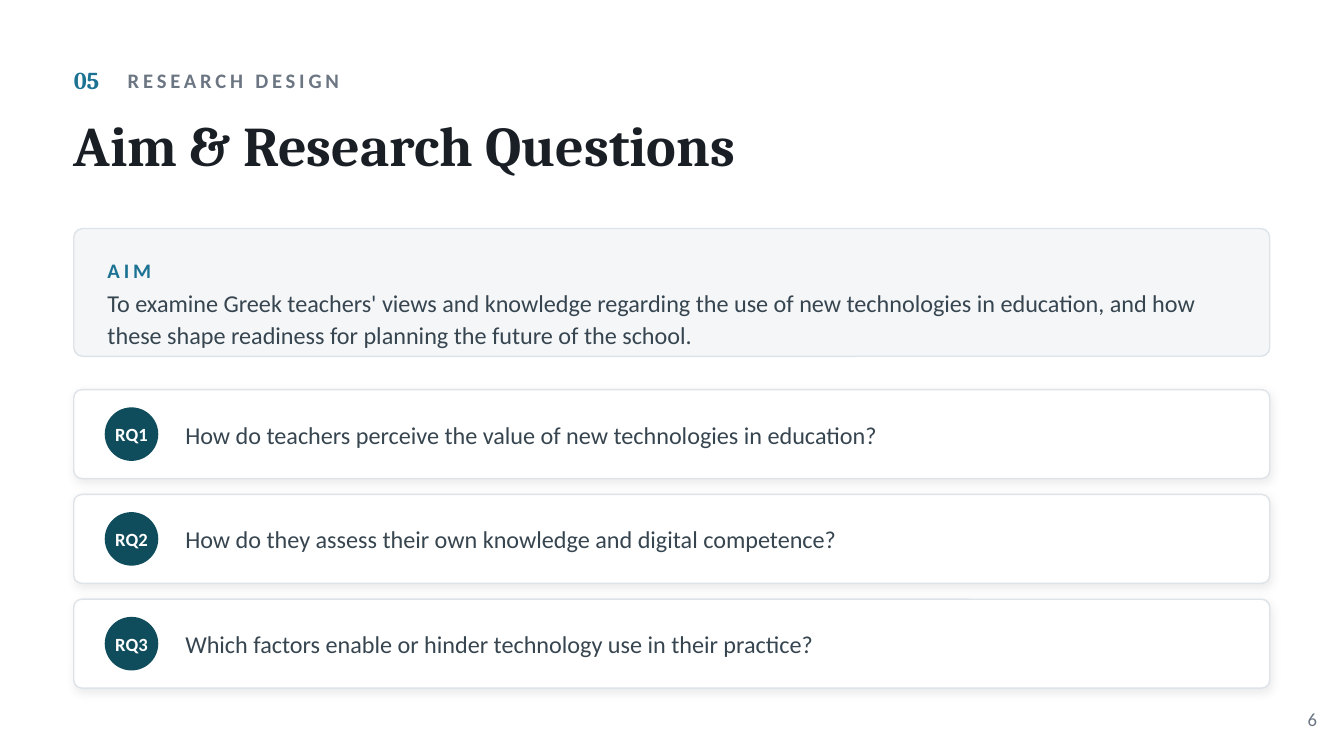
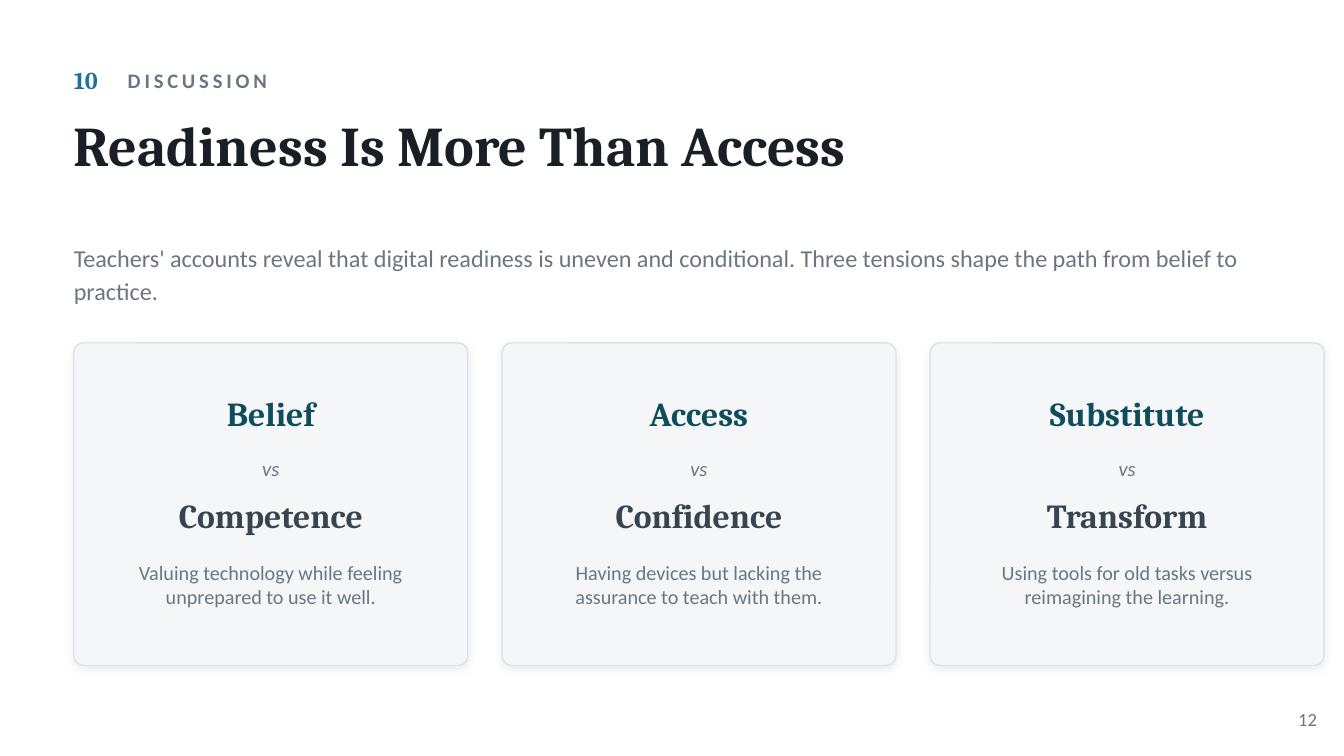
from dataclasses import dataclass, replace

from lxml import etree
from pptx import Presentation
from pptx.dml.color import RGBColor
from pptx.enum.shapes import MSO_SHAPE
from pptx.enum.text import MSO_ANCHOR, MSO_AUTO_SIZE, PP_ALIGN
from pptx.oxml.ns import qn
from pptx.shapes.autoshape import Shape
from pptx.slide import Slide
from pptx.util import Cm, Pt

WHITE = RGBColor(0xFF, 0xFF, 0xFF)
PANEL = RGBColor(0xF4, 0xF6, 0xF8)
BORDER = RGBColor(0xDD, 0xE3, 0xE8)
INK = RGBColor(0x1A, 0x1F, 0x26)
SLATE = RGBColor(0x36, 0x45, 0x4F)
GRAY = RGBColor(0x6B, 0x76, 0x82)
BLUE = RGBColor(0x1C, 0x72, 0x93)
TEAL = RGBColor(0x0F, 0x4C, 0x5C)

SERIF = "Cambria"
SANS = "Calibri"

LEFT = 1.86
WIDTH = 30.14


@dataclass(frozen=True)
class Box:
    x: float
    y: float
    w: float
    h: float

    def lengths(self) -> tuple[Cm, Cm, Cm, Cm]:
        return Cm(self.x), Cm(self.y), Cm(self.w), Cm(self.h)


@dataclass(frozen=True)
class Style:
    size: float
    color: RGBColor
    name: str = SANS
    bold: bool = False
    italic: bool = False
    align: PP_ALIGN = PP_ALIGN.LEFT
    anchor: MSO_ANCHOR = MSO_ANCHOR.MIDDLE
    line_pt: float | None = None
    tracking: float = 0


@dataclass(frozen=True)
class Question:
    label: str
    text: str


@dataclass(frozen=True)
class Tension:
    first: str
    second: str
    detail: str


TITLE = Style(40, INK, SERIF, bold=True, anchor=MSO_ANCHOR.TOP, line_pt=45.3)
NUMBER = Style(17.3, BLUE, SERIF, bold=True)
SECTION = Style(14.7, GRAY, bold=True, tracking=2.7)
PAGE = Style(13.3, GRAY, align=PP_ALIGN.RIGHT)
AIM_LABEL = replace(SECTION, color=BLUE)
AIM_TEXT = Style(17.3, SLATE, line_pt=22.7)
QUESTION = replace(AIM_TEXT, line_pt=21.3)
BADGE = Style(13.3, WHITE, bold=True, align=PP_ALIGN.CENTER)
LEAD = Style(17.3, GRAY, line_pt=24)
FIRST = Style(24, TEAL, SERIF, bold=True, align=PP_ALIGN.CENTER)
SECOND = replace(FIRST, color=SLATE)
VERSUS = Style(14.7, GRAY, italic=True, align=PP_ALIGN.CENTER)
DETAIL = Style(14.4, GRAY, align=PP_ALIGN.CENTER, anchor=MSO_ANCHOR.TOP, line_pt=17.3)

QUESTIONS = [
    Question("RQ1", "How do teachers perceive the value of new technologies in education?"),
    Question("RQ2", "How do they assess their own knowledge and digital competence?"),
    Question("RQ3", "Which factors enable or hinder technology use in their practice?"),
]
TENSIONS = [
    Tension("Belief", "Competence", "Valuing technology while feeling unprepared to use it well."),
    Tension("Access", "Confidence", "Having devices but lacking the assurance to teach with them."),
    Tension("Substitute", "Transform", "Using tools for old tasks versus reimagining the learning."),
]


def write(sp: Shape, text: str, style: Style) -> None:
    tf = sp.text_frame
    tf.word_wrap = True
    tf.auto_size = MSO_AUTO_SIZE.NONE
    tf.vertical_anchor = style.anchor
    tf.margin_left = tf.margin_top = tf.margin_right = tf.margin_bottom = 0
    p = tf.paragraphs[0]
    p.alignment = style.align
    if style.line_pt:
        p.line_spacing = Pt(style.line_pt)
    p.font.name = style.name
    p.font.size = Pt(style.size)
    p.font.bold = style.bold
    p.font.italic = style.italic
    p.font.color.rgb = style.color
    r = p.add_run()
    r.text = text
    if style.tracking:
        r._r.get_or_add_rPr().set("spc", str(round(style.tracking * 100)))


def add_text(s: Slide, box: Box, text: str, style: Style) -> None:
    write(s.shapes.add_textbox(*box.lengths()), text, style)


def add_shadow(sp: Shape) -> None:
    effects = sp._element.spPr.find(qn("a:effectLst"))
    shadow = etree.SubElement(
        effects, qn("a:outerShdw"), blurRad=str(Pt(7)), dist=str(Pt(2)),
        dir="5400000", algn="bl", rotWithShape="0",
    )
    color = etree.SubElement(shadow, qn("a:srgbClr"), val="000000")
    etree.SubElement(color, qn("a:alpha"), val="8000")


def add_card(s: Slide, box: Box, fill: RGBColor, radius: float, shadow: bool = True) -> None:
    sp = s.shapes.add_shape(MSO_SHAPE.ROUNDED_RECTANGLE, *box.lengths())
    sp.adjustments[0] = radius
    sp.fill.solid()
    sp.fill.fore_color.rgb = fill
    sp.line.color.rgb = BORDER
    sp.line.width = Pt(1)
    sp.shadow.inherit = False
    if shadow:
        add_shadow(sp)


def add_badge(s: Slide, box: Box, text: str) -> None:
    sp = s.shapes.add_shape(MSO_SHAPE.OVAL, *box.lengths())
    sp.fill.solid()
    sp.fill.fore_color.rgb = TEAL
    sp.line.fill.background()
    sp.shadow.inherit = False
    write(sp, text, BADGE)


def add_slide(prs: Presentation, number: str, section: str, title: str, page: str) -> Slide:
    s = prs.slides.add_slide(prs.slide_layouts[5])
    s.background.fill.solid()
    s.background.fill.fore_color.rgb = WHITE
    sp = s.shapes.title
    sp.left, sp.top, sp.width, sp.height = Box(LEFT, 2.88, WIDTH, 2.88).lengths()
    write(sp, title, TITLE)
    add_text(s, Box(LEFT, 1.42, 1.3, 1.19), number, NUMBER)
    add_text(s, Box(3.22, 1.42, 23.7, 1.19), section, SECTION)
    add_text(s, Box(31.5, 17.61, 1.69, 1.02), page, PAGE)
    return s


def add_question(s: Slide, y: float, question: Question) -> None:
    height, badge = 2.24, 1.35
    add_card(s, Box(LEFT, y, WIDTH, height), WHITE, 0.09)
    add_badge(s, Box(2.64, y + (height - badge) / 2, badge, badge), question.label)
    add_text(s, Box(4.67, y, 26.75, height), question.text, QUESTION)


def add_tension(s: Slide, card: Box, tension: Tension) -> None:
    add_card(s, card, PANEL, 0.03)
    pad = 1.02
    rows = [
        (1.09, 1.35, tension.first, FIRST),
        (2.64, 1.02, "vs", VERSUS),
        (3.66, 1.35, tension.second, SECOND),
        (5.48, 2.21, tension.detail, DETAIL),
    ]
    for dy, height, text, style in rows:
        add_text(s, Box(card.x + pad, card.y + dy, card.w - 2 * pad, height), text, style)


def build_aim(prs: Presentation) -> None:
    s = add_slide(prs, "05", "RESEARCH DESIGN", "Aim & Research Questions", "6")
    add_card(s, Box(LEFT, 5.76, WIDTH, 3.22), PANEL, 0.07, shadow=False)
    add_text(s, Box(2.71, 6.3, 3.38, 1.02), "AIM", AIM_LABEL)
    add_text(
        s, Box(2.71, 7.25, 28.45, 1.52),
        "To examine Greek teachers' views and knowledge regarding the use of new technologies "
        "in education, and how these shape readiness for planning the future of the school.",
        AIM_TEXT,
    )
    for i, question in enumerate(QUESTIONS):
        add_question(s, 9.82 + i * 2.64, question)


def build_discussion(prs: Presentation) -> None:
    s = add_slide(prs, "10", "DISCUSSION", "Readiness Is More Than Access", "12")
    add_text(
        s, Box(LEFT, 5.76, WIDTH, 2.2),
        "Teachers' accounts reveal that digital readiness is uneven and conditional. "
        "Three tensions shape the path from belief to practice.",
        LEAD,
    )
    width, gap = 9.93, 0.86
    for i, tension in enumerate(TENSIONS):
        add_tension(s, Box(LEFT + i * (width + gap), 8.64, width, 8.13), tension)


def main() -> None:
    prs = Presentation()
    prs.slide_width, prs.slide_height = Cm(33.87), Cm(19.05)
    build_aim(prs)
    build_discussion(prs)
    prs.save("out.pptx")


if __name__ == "__main__":
    main()
